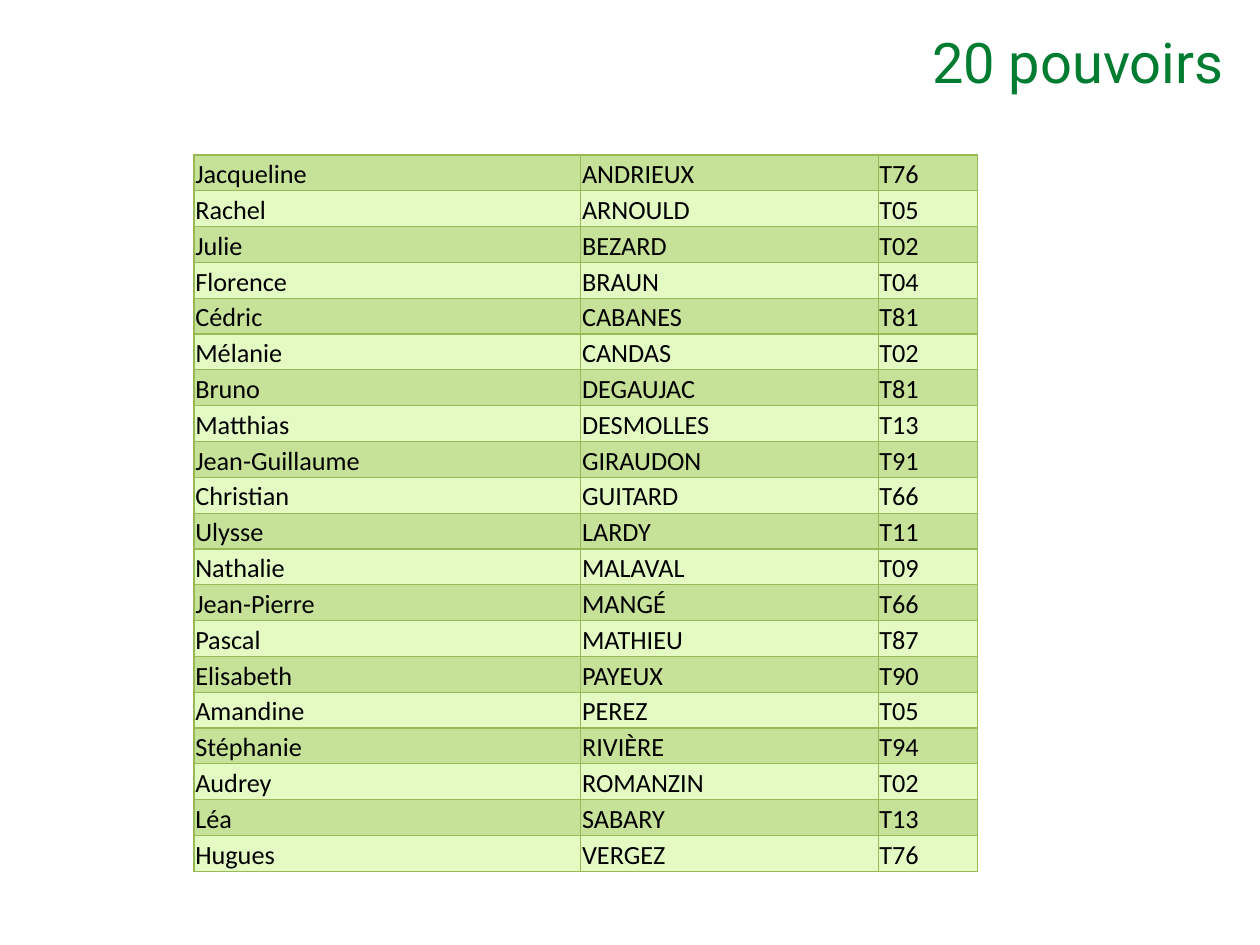
"""Build a slide listing the twenty proxies in a banded table."""
from typing import NamedTuple

from lxml import etree
from pptx import Presentation
from pptx.dml.color import RGBColor
from pptx.enum.text import MSO_ANCHOR, PP_ALIGN
from pptx.oxml.ns import qn
from pptx.util import Pt

MIDDLE, BOTTOM = MSO_ANCHOR.MIDDLE, MSO_ANCHOR.BOTTOM
LEFT, RIGHT = PP_ALIGN.LEFT, PP_ALIGN.RIGHT
TITLE_GREEN, BLACK, BORDER_GREEN = "007C31", "000000", "98B955"
BAND_FILLS = ("C6E198", "E3FAC3")
BORDER_SIDES = ("a:lnL", "a:lnR", "a:lnT", "a:lnB")
BORDER_WIDTH = 0.75
COLUMN_WIDTHS = (221.04, 169.92, 56.88)
ROW_HEIGHT = 20.48
CELL_INSET = 0.72


class Proxy(NamedTuple):
    first_name: str
    last_name: str
    territory: str


PROXIES = (
    Proxy("Jacqueline", "ANDRIEUX", "T76"),
    Proxy("Rachel", "ARNOULD", "T05"),
    Proxy("Julie", "BEZARD", "T02"),
    Proxy("Florence", "BRAUN", "T04"),
    Proxy("Cédric", "CABANES", "T81"),
    Proxy("Mélanie", "CANDAS", "T02"),
    Proxy("Bruno", "DEGAUJAC", "T81"),
    Proxy("Matthias", "DESMOLLES", "T13"),
    Proxy("Jean-Guillaume", "GIRAUDON", "T91"),
    Proxy("Christian", "GUITARD", "T66"),
    Proxy("Ulysse", "LARDY", "T11"),
    Proxy("Nathalie", "MALAVAL", "T09"),
    Proxy("Jean-Pierre", "MANGÉ", "T66"),
    Proxy("Pascal", "MATHIEU", "T87"),
    Proxy("Elisabeth", "PAYEUX", "T90"),
    Proxy("Amandine", "PEREZ", "T05"),
    Proxy("Stéphanie", "RIVIÈRE", "T94"),
    Proxy("Audrey", "ROMANZIN", "T02"),
    Proxy("Léa", "SABARY", "T13"),
    Proxy("Hugues", "VERGEZ", "T76"),
)


def set_color(color_owner, hex_color: str) -> None:
    color_owner.rgb = RGBColor.from_string(hex_color)


def write_text(frame, text: str, *, font: str, size: float, color: str, align=LEFT) -> None:
    paragraph = frame.paragraphs[0]
    paragraph.alignment = align
    run = paragraph.add_run()
    run.text = text
    run.font.name = font
    run.font.size = Pt(size)
    set_color(run.font.color, color)


def draw_borders(cell) -> None:
    properties = cell._tc.get_or_add_tcPr()
    for position, side in enumerate(BORDER_SIDES):
        border = etree.Element(qn(side), w=str(Pt(BORDER_WIDTH)))
        fill = etree.SubElement(border, qn("a:solidFill"))
        etree.SubElement(fill, qn("a:srgbClr"), val=BORDER_GREEN)
        properties.insert(position, border)


def draw_cell(cell, text: str, band_fill: str) -> None:
    cell.margin_left = cell.margin_right = cell.margin_top = Pt(CELL_INSET)
    cell.margin_bottom = Pt(0)
    cell.vertical_anchor = BOTTOM
    cell.fill.solid()
    set_color(cell.fill.fore_color, band_fill)
    draw_borders(cell)
    write_text(cell.text_frame, text, font="Calibri", size=15, color=BLACK)


def draw_title(slide, text: str) -> None:
    frame = slide.shapes.add_textbox(Pt(201.6), Pt(9.36), Pt(504.72), Pt(51.12)).text_frame
    frame.word_wrap = True
    frame.vertical_anchor = MIDDLE
    write_text(frame, text, font="Roboto", size=32, color=TITLE_GREEN, align=RIGHT)


def draw_proxies(slide, proxies: tuple[Proxy, ...]) -> None:
    table = slide.shapes.add_table(
        len(proxies), len(COLUMN_WIDTHS), Pt(110.88), Pt(88.56),
        Pt(sum(COLUMN_WIDTHS)), Pt(ROW_HEIGHT * len(proxies)),
    ).table
    table.first_row = False
    for column, width in zip(table.columns, COLUMN_WIDTHS):
        column.width = Pt(width)
    for index, (row, proxy) in enumerate(zip(table.rows, proxies)):
        row.height = Pt(ROW_HEIGHT)
        for cell, text in zip(row.cells, proxy):
            draw_cell(cell, text, BAND_FILLS[index % 2])


def main() -> None:
    presentation = Presentation()
    presentation.slide_width, presentation.slide_height = Pt(720), Pt(540)
    slide = presentation.slides.add_slide(presentation.slide_layouts[6])
    draw_title(slide, "20 pouvoirs")
    draw_proxies(slide, PROXIES)
    presentation.save("out.pptx")


if __name__ == "__main__":
    main()
